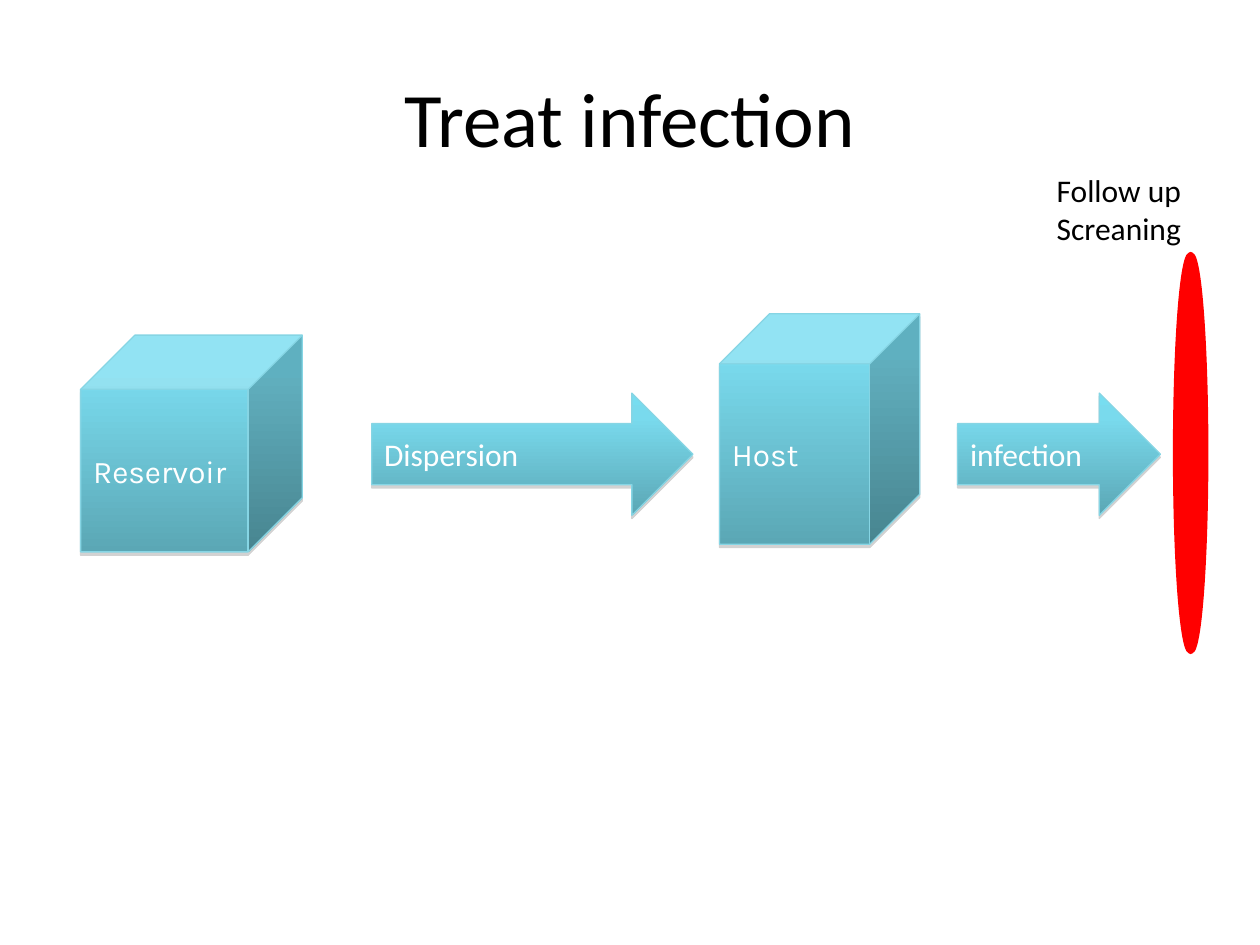
import copy
from dataclasses import dataclass

import pptx
import pptx.dml.color
import pptx.enum.shapes
import pptx.enum.text
import pptx.oxml.ns
import pptx.oxml.xmlchemy
import pptx.util
from lxml import etree

Inches = pptx.util.Inches
Pt = pptx.util.Pt
Shape = pptx.enum.shapes.MSO_SHAPE
Align = pptx.enum.text.PP_ALIGN
Anchor = pptx.enum.text.MSO_ANCHOR
qn = pptx.oxml.ns.qn

GRADIENT = [(0, "77DDF0"), (0.2, "79DAED"), (1, "5BA7B5")]
EDGE = "86D5E4"
ARROW_TOP, ARROW_HEIGHT = 3.12, 0.97


@dataclass
class Stage:
    """One labelled step in the chain of infection."""
    label: str
    kind: Shape
    left: float
    top: float
    width: float
    height: float
    font: str


STAGES = [
    Stage("Reservoir", Shape.CUBE, 0.64, 2.66, 1.76, 1.72, "Karla"),
    Stage("Host", Shape.CUBE, 5.71, 2.49, 1.59, 1.83, "Karla"),
    Stage("Dispersion", Shape.RIGHT_ARROW, 2.95, ARROW_TOP, 2.55, ARROW_HEIGHT, "Calibri"),
    Stage("infection", Shape.RIGHT_ARROW, 7.6, ARROW_TOP, 1.61, ARROW_HEIGHT, "Calibri"),
]


def color(value: str) -> pptx.dml.color.RGBColor:
    return pptx.dml.color.RGBColor.from_string(value)


def add_span(para, text: str, size: float, font: str, hex_color: str) -> None:
    span = para.add_run()
    span.text = text
    span.font.size = Pt(size)
    span.font.name = font
    span.font.color.rgb = color(hex_color)


def apply_gradient(shape) -> None:
    """Fill from top to bottom with the three gradient stops."""
    shape.fill.gradient()
    shape.fill.gradient_angle = 270
    stop_list = shape._element.spPr.find(".//" + qn("a:gsLst"))
    stop_list.insert(1, copy.deepcopy(stop_list[0]))
    for stop, (position, hex_color) in zip(shape.fill.gradient_stops, GRADIENT):
        stop.position = position
        stop.color.rgb = color(hex_color)


def apply_shadow(shape) -> None:
    """Drop a soft grey shadow straight down."""
    shape.shadow.inherit = False
    effects = shape._element.spPr.find(qn("a:effectLst"))
    shadow = etree.SubElement(effects, qn("a:outerShdw"), blurRad="0",
                              dist=str(Pt(1.8)), dir="5400000", rotWithShape="0")
    tint = etree.SubElement(shadow, qn("a:srgbClr"), val="808080")
    etree.SubElement(tint, qn("a:alpha"), val="35000")


def add_stage(page, stage: Stage) -> None:
    shape = page.shapes.add_shape(stage.kind, Inches(stage.left), Inches(stage.top),
                                  Inches(stage.width), Inches(stage.height))
    apply_gradient(shape)
    shape.line.color.rgb = color(EDGE)
    shape.line.width = Pt(0.75)
    apply_shadow(shape)
    frame = shape.text_frame
    frame.vertical_anchor = Anchor.MIDDLE
    para = frame.paragraphs[0]
    para.alignment = Align.LEFT
    add_span(para, stage.label, 18, stage.font, "FFFFFF")


def add_barrier(page) -> None:
    barrier = page.shapes.add_shape(Shape.OVAL, Inches(9.33), Inches(2.02),
                                    Inches(0.24), Inches(3.15))
    barrier.shadow.inherit = False
    barrier.fill.solid()
    barrier.fill.fore_color.rgb = color("FF0000")
    barrier.line.color.rgb = color("FF0000")
    barrier.line.width = Pt(3)


def add_caption(page, lines: list[str]) -> None:
    box = page.shapes.add_textbox(Inches(7.76), Inches(1.31), Inches(2.24), Inches(0.71))
    frame = box.text_frame
    frame.word_wrap = True
    frame.auto_size = pptx.enum.text.MSO_AUTO_SIZE.SHAPE_TO_FIT_TEXT
    for index, line in enumerate(lines):
        para = frame.add_paragraph() if index else frame.paragraphs[0]
        para.alignment = Align.CENTER
        add_span(para, line, 18, "Calibri", "000000")


def main() -> None:
    deck = pptx.Presentation()
    deck.slide_width, deck.slide_height = Inches(10), Inches(7.5)
    page = deck.slides.add_slide(deck.slide_layouts.get_by_name("Title Only"))

    # Title
    title = page.shapes.title
    title.left, title.top = Inches(0.5), Inches(0.3)
    title.width, title.height = Inches(9), Inches(1.25)
    title.text_frame.vertical_anchor = Anchor.MIDDLE
    heading = title.text_frame.paragraphs[0]
    heading.alignment = Align.CENTER
    add_span(heading, "Treat infection", 44, "Calibri", "000000")

    # Chain from reservoir to infection
    for stage in STAGES:
        add_stage(page, stage)

    # Barrier and its caption
    add_barrier(page)
    add_caption(page, ["Follow up", "Screaning"])

    deck.save("out.pptx")


if __name__ == "__main__":
    main()
